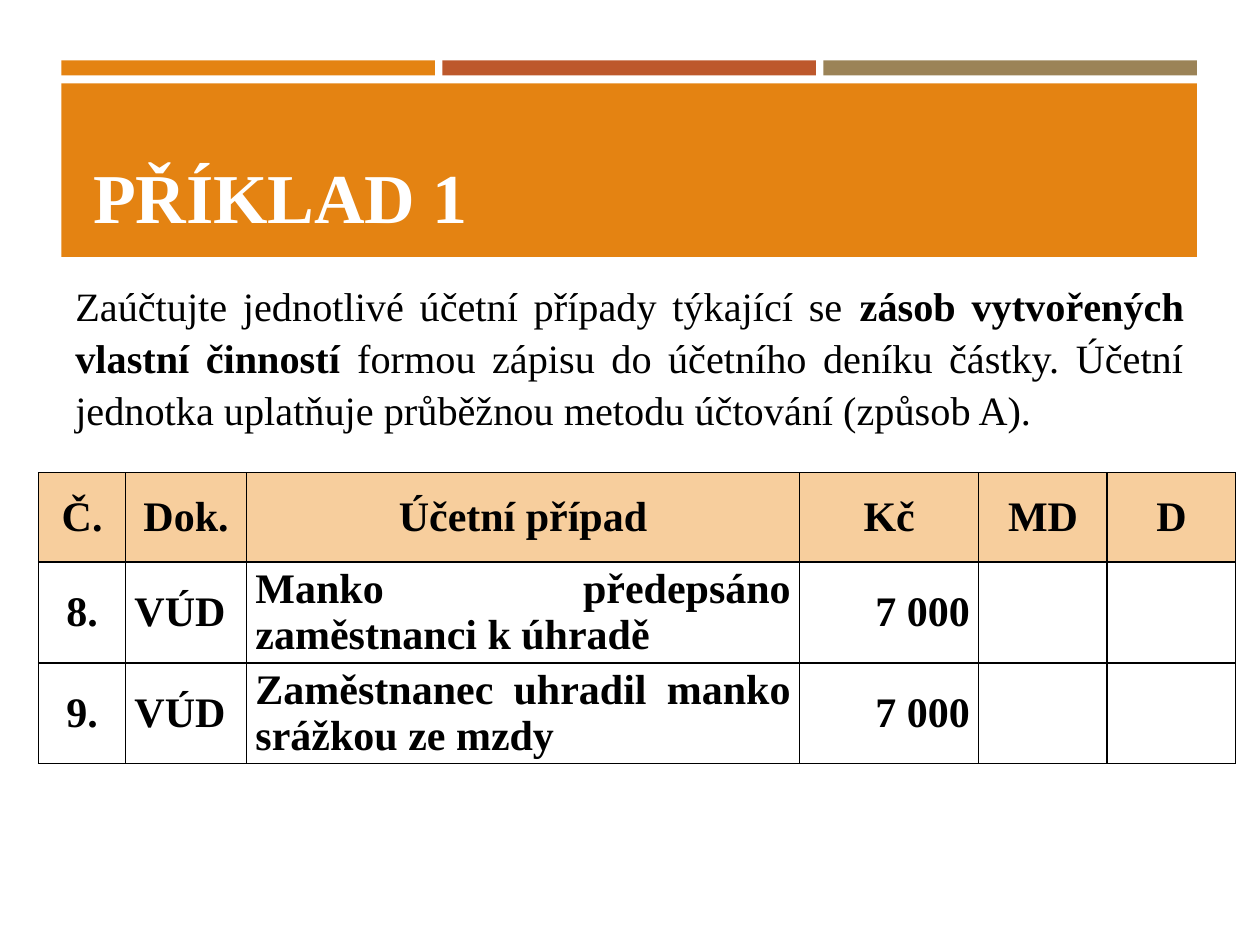
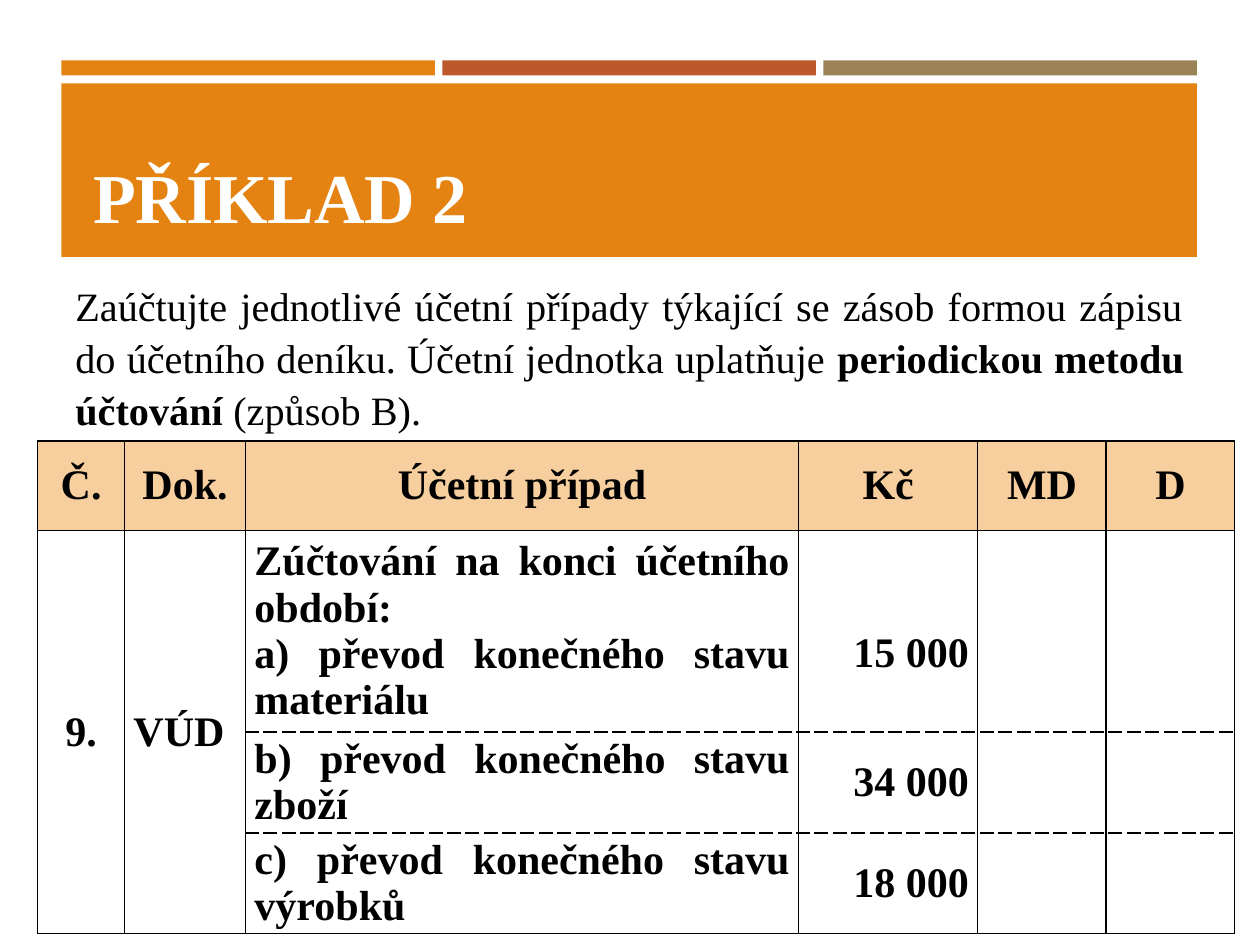
"""Build two accounting exercise slides with a shared header and journal tables."""
from dataclasses import dataclass
from typing import Any

import lxml.etree
import pptx
import pptx.dml.color
import pptx.enum.shapes
import pptx.enum.text
import pptx.oxml.ns
import pptx.util

Cm, Pt = pptx.util.Cm, pptx.util.Pt
RGBColor = pptx.dml.color.RGBColor
PP_ALIGN = pptx.enum.text.PP_ALIGN
MSO_ANCHOR = pptx.enum.text.MSO_ANCHOR
qn = pptx.oxml.ns.qn

ORANGE = RGBColor(0xE4, 0x83, 0x12)
RUST = RGBColor(0xBD, 0x58, 0x2C)
KHAKI = RGBColor(0x9B, 0x83, 0x57)
PEACH = RGBColor(0xF7, 0xCE, 0x9D)
WHITE = RGBColor(0xFF, 0xFF, 0xFF)
BLACK = RGBColor(0, 0, 0)

FONT = "Times New Roman"
TITLE_FONT = {"name": FONT, "size": Pt(40), "bold": True}
TASK_FONT = {"name": FONT, "size": Pt(23)}
CELL_FONT = {"name": FONT, "size": Pt(24), "bold": True}
CELL_FORMAT = {
    "vertical_anchor": MSO_ANCHOR.MIDDLE,
    "margin_left": Cm(0.18),
    "margin_right": Cm(0.18),
    "margin_top": 0,
    "margin_bottom": 0,
}
HEADINGS = ("Č.", "Dok.", "Účetní případ", "Kč", "MD", "D")
COLUMN_WIDTHS = (1.75, 2.44, 11.15, 3.61, 2.59, 2.59)
COLUMN_ALIGNS = (PP_ALIGN.CENTER, PP_ALIGN.LEFT, PP_ALIGN.JUSTIFY,
                 PP_ALIGN.RIGHT, PP_ALIGN.CENTER, PP_ALIGN.CENTER)
CASE_COLUMN, AMOUNT_COLUMN = 2, 3


@dataclass(frozen=True)
class Bar:
    """A filled rectangle of the header, in centimetres."""
    left: float
    top: float
    width: float
    height: float
    color: RGBColor


@dataclass(frozen=True)
class Entry:
    """One journal row; a part continues the entry above it."""
    number: str
    document: str
    case: str
    amount: str
    height: float = 2.03
    amount_drop: float = 0
    is_part: bool = False


@dataclass(frozen=True)
class Exercise:
    """The content of one slide; the task alternates plain and bold runs."""
    title: str
    task: tuple[str, ...]
    table_left: float
    table_top: float
    entries: tuple[Entry, ...]


HEADER_BARS = (
    *(Bar(1.24 + 7.68 * i, 1.22, 7.53, 0.3, color)
      for i, color in enumerate((ORANGE, RUST, KHAKI))),
    Bar(1.24, 1.68, 22.89, 3.5, ORANGE),
)

EXERCISES = (
    Exercise(
        "PŘÍKLAD 1",
        ("Zaúčtujte jednotlivé účetní případy týkající se ",
         "zásob vytvořených vlastní činností ",
         "formou zápisu do účetního deníku částky. Účetní jednotka "
         "uplatňuje průběžnou metodu účtování (způsob A)."),
        0.78, 9.53,
        (Entry("8.", "VÚD", "Manko předepsáno zaměstnanci k úhradě", "7 000"),
         Entry("9.", "VÚD", "Zaměstnanec uhradil manko srážkou ze mzdy", "7 000")),
    ),
    Exercise(
        "PŘÍKLAD 2",
        ("Zaúčtujte jednotlivé účetní případy týkající se zásob formou zápisu "
         "do účetního deníku. Účetní jednotka uplatňuje ",
         "periodickou metodu účtování ",
         "(způsob B)."),
        0.76, 8.89,
        (Entry("9.", "VÚD",
               "Zúčtování na konci účetního období:\n"
               "a) převod konečného stavu materiálu",
               "15 000", height=4.06, amount_drop=0.9),
         Entry("", "", "b) převod konečného stavu zboží", "34 000", is_part=True),
         Entry("", "", "c) převod konečného stavu výrobků", "18 000", is_part=True)),
    ),
)


def apply_format(target: Any, values: dict[str, Any]) -> None:
    """Set every named attribute on the target."""
    for name, value in values.items():
        setattr(target, name, value)


def add_run(p: Any, text: str, font: dict[str, Any], color: RGBColor) -> None:
    """Append a formatted run to a paragraph."""
    r = p.add_run()
    r.text = text
    apply_format(r.font, font)
    r.font.color.rgb = color


def add_bar(s: Any, bar: Bar) -> None:
    """Draw one header rectangle."""
    sp = s.shapes.add_shape(
        pptx.enum.shapes.MSO_SHAPE.RECTANGLE,
        Cm(bar.left), Cm(bar.top), Cm(bar.width), Cm(bar.height))
    sp.shadow.inherit = False
    sp.fill.solid()
    sp.fill.fore_color.rgb = bar.color
    sp.line.fill.background()


def add_text_frame(s: Any, left: float, top: float, width: float, height: float) -> Any:
    """Add a wrapping text box and return its text frame."""
    tf = s.shapes.add_textbox(Cm(left), Cm(top), Cm(width), Cm(height)).text_frame
    tf.word_wrap = True
    return tf


def set_borders(cell: Any, top_dash: str, bottom_dash: str) -> None:
    """Give a cell black one-point borders."""
    tc_pr = cell._tc.get_or_add_tcPr()
    dashes = {"lnL": "solid", "lnR": "solid", "lnT": top_dash, "lnB": bottom_dash}
    for i, (side, dash) in enumerate(dashes.items()):
        ln = lxml.etree.Element(qn(f"a:{side}"), w=str(Pt(1)))
        fill = lxml.etree.SubElement(ln, qn("a:solidFill"))
        lxml.etree.SubElement(fill, qn("a:srgbClr"), val=str(BLACK))
        lxml.etree.SubElement(ln, qn("a:prstDash"), val=dash)
        tc_pr.insert(i, ln)


def fill_cell(cell: Any, text: str, align: Any) -> None:
    """Write the lines of a cell and set its format."""
    apply_format(cell, CELL_FORMAT)
    for i, line in enumerate(text.split("\n")):
        tf = cell.text_frame
        p = tf.add_paragraph() if i else tf.paragraphs[0]
        p.alignment = align
        if line:
            add_run(p, line, CELL_FONT, BLACK)


def add_journal(s: Any, exercise: Exercise) -> None:
    """Draw the journal table of an exercise."""
    entries = exercise.entries
    heights = [1.8, *(e.height for e in entries)]
    table = s.shapes.add_table(
        len(heights), len(HEADINGS), Cm(exercise.table_left), Cm(exercise.table_top),
        Cm(sum(COLUMN_WIDTHS)), Cm(sum(heights))).table
    apply_format(table, {"first_row": False, "horz_banding": False})
    for column, width in zip(table.columns, COLUMN_WIDTHS):
        column.width = Cm(width)
    for row, height in zip(table.rows, heights):
        row.height = Cm(height)

    parts = [False, *(e.is_part for e in entries), False]
    for col, heading in enumerate(HEADINGS):
        cell = table.cell(0, col)
        fill_cell(cell, heading, PP_ALIGN.CENTER)
        cell.fill.solid()
        cell.fill.fore_color.rgb = PEACH
        set_borders(cell, "solid", "solid")
    for row, e in enumerate(entries, start=1):
        texts = (e.number, e.document, e.case, e.amount, "", "")
        for col, (text, align) in enumerate(zip(texts, COLUMN_ALIGNS)):
            cell = table.cell(row, col)
            fill_cell(cell, text, align)
            cell.fill.background()
            top, bottom = ("dash" if part and col >= CASE_COLUMN else "solid"
                           for part in parts[row:row + 2])
            set_borders(cell, top, bottom)
        table.cell(row, AMOUNT_COLUMN).margin_top = Cm(e.amount_drop)
    if any(parts):
        for col in range(CASE_COLUMN):
            table.cell(1, col).merge(table.cell(len(entries), col))


def add_exercise(prs: Any, exercise: Exercise) -> None:
    """Add one complete exercise slide."""
    s = prs.slides.add_slide(prs.slide_layouts[6])
    for bar in HEADER_BARS:
        add_bar(s, bar)

    tf = add_text_frame(s, 1.63, 1.91, 22.2, 3)
    tf.vertical_anchor = MSO_ANCHOR.BOTTOM
    add_run(tf.paragraphs[0], exercise.title, TITLE_FONT, WHITE)

    p = add_text_frame(s, 1.27, 5.46, 22.86, 3.2).paragraphs[0]
    apply_format(p, {"alignment": PP_ALIGN.JUSTIFY, "line_spacing": 1.08})
    for i, text in enumerate(exercise.task):
        add_run(p, text, {**TASK_FONT, "bold": i % 2 == 1}, BLACK)

    add_journal(s, exercise)


def main() -> None:
    """Create and save the presentation."""
    prs = pptx.Presentation()
    apply_format(prs, {"slide_width": Cm(25.4), "slide_height": Cm(19.05)})
    for exercise in EXERCISES:
        add_exercise(prs, exercise)
    prs.save("out.pptx")


if __name__ == "__main__":
    main()
